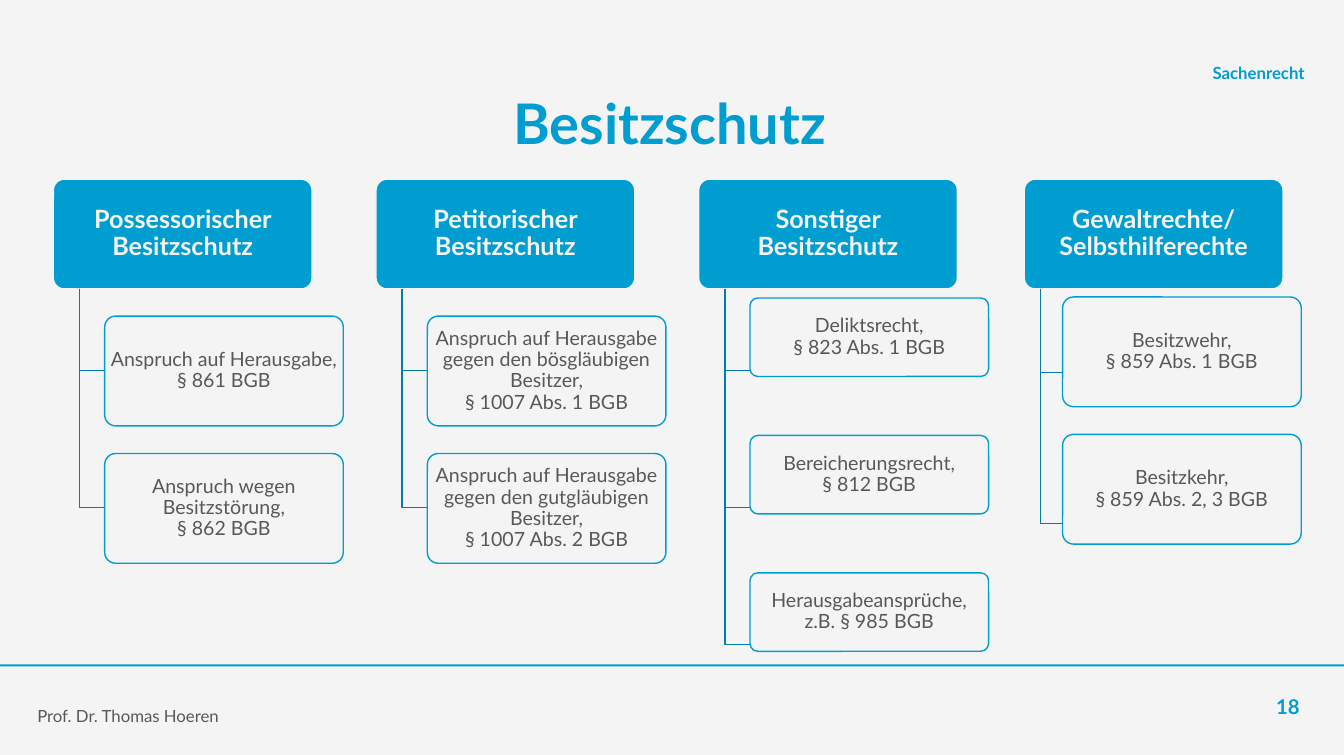
from lxml import etree
from pptx import Presentation
from pptx.dml.color import RGBColor
from pptx.enum.shapes import MSO_SHAPE
from pptx.enum.text import MSO_ANCHOR, MSO_AUTO_SIZE, PP_ALIGN
from pptx.oxml.ns import qn
from pptx.util import Inches, Pt

TITLE = "Besitzschutz"
SUBJECT = "Sachenrecht"
LECTURER = "Prof. Dr. Thomas Hoeren"
PAGE = "18"
BRANCHES = [
    {"head": "Possessorischer Besitzschutz",
     "claims": ["Anspruch auf Herausgabe,\n§ 861 BGB",
                "Anspruch wegen Besitzstörung,\n§ 862 BGB"]},
    {"head": "Petitorischer Besitzschutz",
     "claims": ["Anspruch auf Herausgabe gegen den bösgläubigen Besitzer,\n§ 1007 Abs. 1 BGB",
                "Anspruch auf Herausgabe gegen den gutgläubigen Besitzer,\n§ 1007 Abs. 2 BGB"]},
    {"head": "Sonstiger Besitzschutz", "first": 2.96, "height": 0.78,
     "claims": ["Deliktsrecht,\n§ 823 Abs. 1 BGB",
                "Bereicherungsrecht,\n§ 812 BGB",
                "Herausgabeansprüche,\nz.B. § 985 BGB"]},
    {"head": "Gewaltrechte/\nSelbsthilferechte", "shift": 0.03, "first": 2.95,
     "stem": 0.16, "indent": 0.38, "joint": 3.7, "joint_step": 1.5,
     "claims": ["Besitzwehr,\n§ 859 Abs. 1 BGB",
                "Besitzkehr,\n§ 859 Abs. 2, 3 BGB"]},
]
USUAL = {"shift": 0, "first": 3.14, "height": 1.09, "stem": 0.26,
         "indent": 0.51, "joint": 3.68, "joint_step": 1.36}

COLORS = {"paper": "F4F4F4", "blue": "009DD1", "stem": "007EA7", "text": "58585A"}
FONT = "Lato"
WIDTH, HEIGHT = 13.35, 7.5
MARGIN = 0.37
COLUMN_LEFT, COLUMN_STEP = 0.53, 3.205
HEAD_TOP, HEAD_WIDTH, HEAD_HEIGHT = 1.78, 2.57, 1.09
CLAIM_WIDTH, CLAIM_STEP = 2.37, 1.365


def color(name):
    return RGBColor.from_string(COLORS[name])


def write(part, text, size, ink, align, anchor, bold=False, inset=(0, 0), spacing=None):
    frame = part.text_frame
    frame.text = text
    frame.word_wrap = True
    frame.auto_size = MSO_AUTO_SIZE.NONE
    frame.vertical_anchor = anchor
    frame.margin_left = frame.margin_right = Inches(inset[0])
    frame.margin_top = frame.margin_bottom = Inches(inset[1])
    for paragraph in frame.paragraphs:
        paragraph.alignment = align
        paragraph.line_spacing = spacing
        for run in paragraph.runs:
            run.font.name = FONT
            run.font.size = Pt(size)
            run.font.bold = bold
            run.font.color.rgb = color(ink)


def add_label(slide, box, text, size, ink, align, bold):
    label = slide.shapes.add_textbox(*map(Inches, box))
    write(label, text, size, ink, align, MSO_ANCHOR.BOTTOM, bold)


def add_card(slide, box, fill, border):
    card = slide.shapes.add_shape(MSO_SHAPE.ROUNDED_RECTANGLE, *map(Inches, box))
    card.adjustments[0] = 0.1
    card.shadow.inherit = False
    card.fill.solid()
    card.fill.fore_color.rgb = color(fill)
    card.line.color.rgb = color(border)
    card.line.width = Pt(1)
    return card


def add_stem(slide, x, top, joint, end):
    builder = slide.shapes.build_freeform(Inches(x), Inches(top))
    builder.add_line_segments(
        [(Inches(x), Inches(joint)), (Inches(end), Inches(joint))], close=False)
    stem = builder.convert_to_shape()
    stem.shadow.inherit = False
    stem.fill.background()
    stem.line.color.rgb = color("stem")
    stem.line.width = Pt(1)


def add_branch(slide, column, branch):
    place = {**USUAL, **branch}
    left = COLUMN_LEFT + column * COLUMN_STEP + place["shift"]
    head = add_card(slide, (left, HEAD_TOP, HEAD_WIDTH, HEAD_HEIGHT), "blue", "paper")
    write(head, place["head"], 18, "paper", PP_ALIGN.CENTER, MSO_ANCHOR.MIDDLE,
          True, (0.04, 0.03), 0.9)
    claim_left = left + place["indent"]
    for row, text in enumerate(place["claims"]):
        add_stem(slide, left + place["stem"], HEAD_TOP + HEAD_HEIGHT,
                 place["joint"] + row * place["joint_step"], claim_left)
        top = place["first"] + row * CLAIM_STEP
        claim = add_card(slide, (claim_left, top, CLAIM_WIDTH, place["height"]),
                         "paper", "blue")
        tint = claim.fill.fore_color._xFill.find(qn("a:srgbClr"))
        etree.SubElement(tint, qn("a:alpha"), val="90000")
        write(claim, text, 14, "text", PP_ALIGN.CENTER, MSO_ANCHOR.MIDDLE,
              False, (0.02, 0.02), 0.9)


def main():
    deck = Presentation()
    deck.slide_width, deck.slide_height = Inches(WIDTH), Inches(HEIGHT)
    slide = deck.slides.add_slide(deck.slide_layouts[5])
    slide.background.fill.solid()
    slide.background.fill.fore_color.rgb = color("paper")

    title = slide.shapes.title
    title.left, title.top = Inches(MARGIN), Inches(0.88)
    title.width, title.height = Inches(12.56), Inches(0.63)
    write(title, TITLE, 40, "blue", PP_ALIGN.CENTER, MSO_ANCHOR.TOP, True)

    rule = slide.shapes.add_shape(
        MSO_SHAPE.RECTANGLE, 0, Inches(0.88 * HEIGHT), Inches(WIDTH), Inches(0.02))
    rule.shadow.inherit = False
    rule.fill.solid()
    rule.fill.fore_color.rgb = color("blue")
    rule.line.fill.background()

    add_label(slide, (3.94, 0.43, 9.02, 0.39), SUBJECT, 12, "blue", PP_ALIGN.RIGHT, True)
    add_label(slide, (12.17, 6.75, 0.74, 0.39), PAGE, 14.5, "blue", PP_ALIGN.RIGHT, True)
    add_label(slide, (MARGIN, 6.82, 9.21, 0.39), LECTURER, 12, "text", PP_ALIGN.LEFT, False)

    for column, branch in enumerate(BRANCHES):
        add_branch(slide, column, branch)
    deck.save("out.pptx")


if __name__ == "__main__":
    main()
